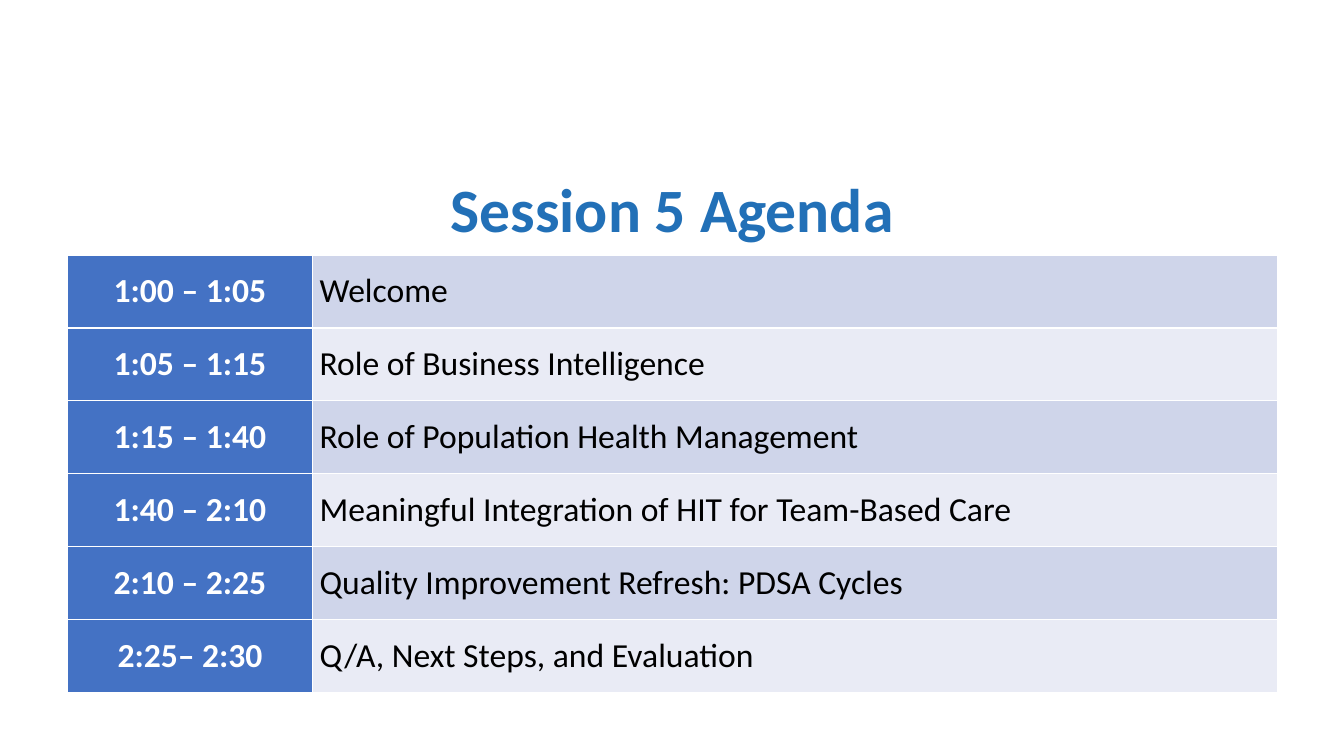
from dataclasses import dataclass

from lxml import etree
from pptx import Presentation
from pptx import util as u
from pptx.dml import color
from pptx.enum import text
from pptx.oxml import ns


@dataclass(frozen=True)
class Theme:
    font: str = "Calibri"
    title_size: int = 44
    table_size: int = 24
    title: str = "2270B7"
    time_fill: str = "4472C4"
    bands: tuple = ("CFD5EA", "E9EBF5")
    light: str = "FFFFFF"
    dark: str = "000000"


theme = Theme()


def write(frame, words, *, size, ink, bold=False, align=text.PP_ALIGN.LEFT, spacing=1.0):
    para = frame.paragraphs[0]
    para.alignment = align
    para.line_spacing = spacing
    span = para.add_run()
    span.text = words
    span.font.name = theme.font
    span.font.size = u.Pt(size)
    span.font.bold = bold
    span.font.color.rgb = color.RGBColor.from_string(ink)


def add_borders(cell, ink, width):
    properties = cell._tc.get_or_add_tcPr()
    for side in ("a:lnL", "a:lnR", "a:lnT", "a:lnB"):
        line = etree.SubElement(properties, ns.qn(side), w=str(int(width)))
        fill = etree.SubElement(line, ns.qn("a:solidFill"))
        etree.SubElement(fill, ns.qn("a:srgbClr"), val=ink)


# Deck and page
deck = Presentation()
deck.slide_width, deck.slide_height = u.Inches(13.33), u.Inches(7.5)
page = deck.slides.add_slide(deck.slide_layouts[5])

# Title
title = page.shapes.title
title.left, title.top = u.Inches(0.92), u.Inches(1.69)
title.width, title.height = u.Inches(11.5), u.Inches(0.83)
title.text_frame.vertical_anchor = text.MSO_ANCHOR.MIDDLE
title.text_frame.auto_size = text.MSO_AUTO_SIZE.NONE
write(title.text_frame, "Session 5 Agenda", size=theme.title_size, ink=theme.title,
      bold=True, align=text.PP_ALIGN.CENTER, spacing=0.9)

# Agenda table
agenda = [
    ("1:00 – 1:05", "Welcome"),
    ("1:05 – 1:15", "Role of Business Intelligence"),
    ("1:15 – 1:40", "Role of Population Health Management"),
    ("1:40 – 2:10", "Meaningful Integration of HIT for Team-Based Care"),
    ("2:10 – 2:25", "Quality Improvement Refresh: PDSA Cycles"),
    ("2:25– 2:30", "Q/A, Next Steps, and Evaluation"),
]
table = page.shapes.add_table(len(agenda), 2, u.Inches(0.67), u.Inches(2.53),
                              u.Inches(12), u.Inches(4.34)).table
table.first_row = False
table.first_col = True
for column, width in zip(table.columns, (2.43, 9.57)):
    column.width = u.Inches(width)

# Rows: time on the left, topic on a banded fill
for index, (time, topic) in enumerate(agenda):
    time_cell, topic_cell = table.cell(index, 0), table.cell(index, 1)
    band = theme.bands[index % len(theme.bands)]
    for cell, shade in ((time_cell, theme.time_fill), (topic_cell, band)):
        cell.margin_left = cell.margin_right = u.Inches(0.07)
        cell.margin_top = cell.margin_bottom = 0
        cell.vertical_anchor = text.MSO_ANCHOR.MIDDLE
        add_borders(cell, theme.light, u.Pt(1))
        cell.fill.solid()
        cell.fill.fore_color.rgb = color.RGBColor.from_string(shade)
    write(time_cell.text_frame, time, size=theme.table_size, ink=theme.light,
          bold=True, align=text.PP_ALIGN.CENTER)
    write(topic_cell.text_frame, topic, size=theme.table_size, ink=theme.dark)

deck.save("out.pptx")
